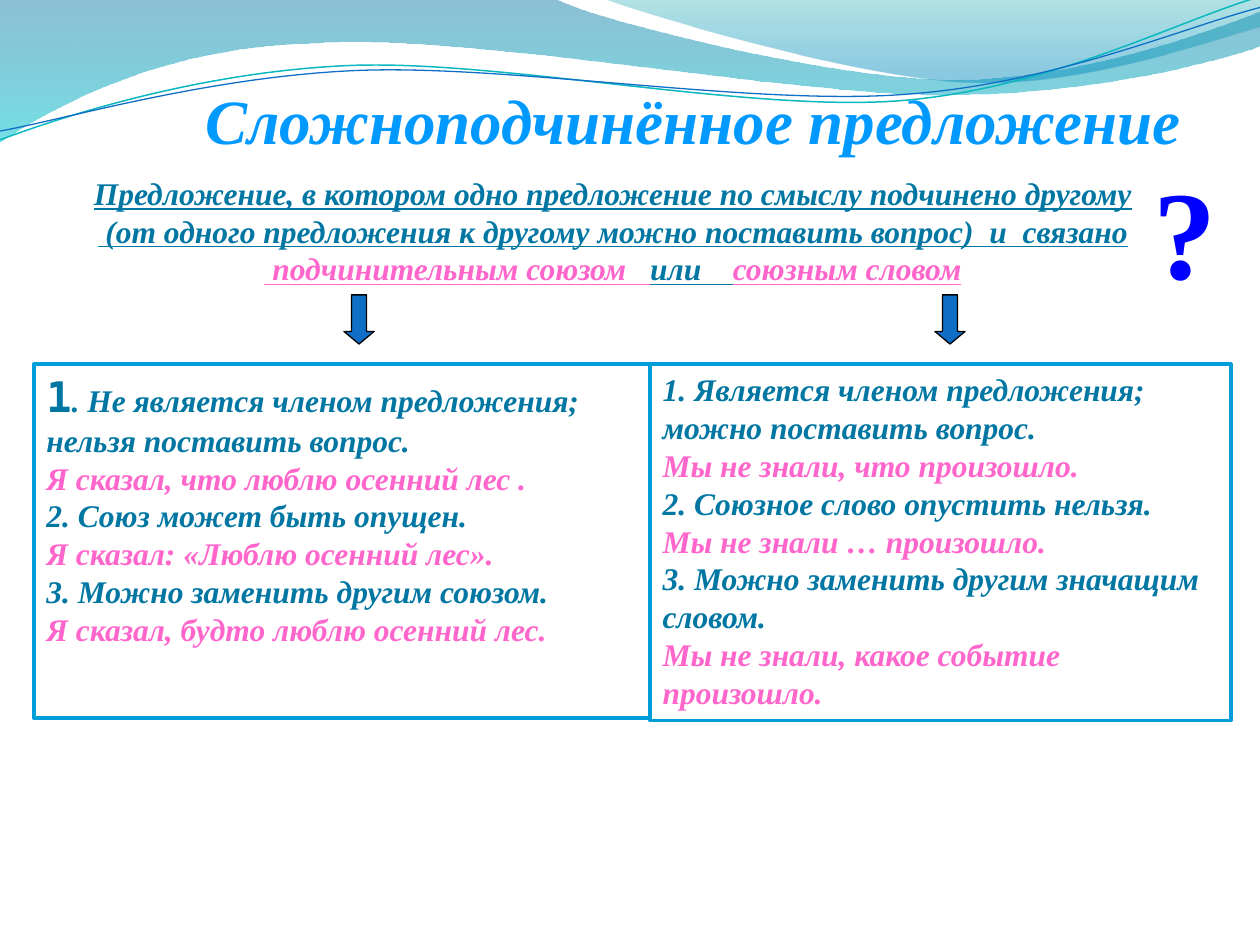
from math import cos, radians, sin
from typing import NamedTuple

from lxml import etree
from pptx import Presentation
from pptx.dml.color import RGBColor
from pptx.enum.shapes import MSO_SHAPE
from pptx.enum.text import MSO_ANCHOR, PP_ALIGN
from pptx.oxml.ns import qn
from pptx.util import Inches, Pt

RECT, DOWN_ARROW = MSO_SHAPE.RECTANGLE, MSO_SHAPE.DOWN_ARROW
LEFT, CENTER = PP_ALIGN.LEFT, PP_ALIGN.CENTER
TOP = MSO_ANCHOR.TOP

WHITE = RGBColor(0xFF, 0xFF, 0xFF)
BLACK = RGBColor(0x00, 0x00, 0x00)
SKY = RGBColor(0x00, 0x99, 0xFF)
TEAL = RGBColor(0x00, 0x76, 0xA3)
PINK = RGBColor(0xFF, 0x66, 0xCC)
BLUE = RGBColor(0x00, 0x00, 0xFF)
BORDER = RGBColor(0x00, 0x9D, 0xD9)
ACCENT = RGBColor(0x0F, 0x6F, 0xC6)
CYAN = RGBColor(0x0A, 0xB8, 0xBF)
DEEP = RGBColor(0x00, 0x74, 0xA1)
AQUA = RGBColor(0x00, 0xC6, 0xCF)
SEA = RGBColor(0x00, 0xA1, 0xA9)
AZURE = RGBColor(0x00, 0x8B, 0xBF)

SERIF = "Times New Roman"
MONO = "DejaVu Sans Mono"
TILT = 2.7


class Stop(NamedTuple):
    position: float
    color: RGBColor
    opacity: int


class Wave(NamedTuple):
    start: tuple
    segments: list
    stops: tuple


class Strand(NamedTuple):
    start: tuple
    segments: list
    center: tuple
    color: RGBColor
    width: float


class Panel(NamedTuple):
    box: tuple
    lines: list


class Span(NamedTuple):
    text: str
    color: RGBColor = TEAL
    size: float = 18
    font: str = SERIF
    italic: bool = True


WAVES = [
    Wave((0, 0), [
        (4.4, -0.01),
        (4.76, 0.17, 6.64, 0.63, 7.58, 0.63),
        (8.53, 0.63, 9.58, 0.26, 10, 0.09),
        (10.01, 0.36),
        (9.83, 0.44, 8.7, 0.76, 7.46, 0.75),
        (6.22, 0.75, 3.82, 0.28, 2.57, 0.34),
        (1.29, 0.36, 0.46, 0.83, -0.01, 1.13),
        (0, 0),
    ], (Stop(0, DEEP, 45), Stop(1, AQUA, 55))),
    Wave((4.79, -0.01), [
        (5.09, 0.11, 6.82, 0.62, 7.69, 0.65),
        (8.56, 0.69, 9.61, 0.32, 10, 0.21),
        (10, 0),
        (4.79, -0.01),
    ], (Stop(0, SEA, 30), Stop(0.8, AZURE, 45))),
]

STRANDS = [
    Strand((0, 1.11), [
        (0.48, 0.93, 1.58, 0.57, 2.77, 0.52),
        (3.95, 0.47, 5.93, 0.89, 7.13, 0.8),
        (8.33, 0.71, 9.38, 0.15, 9.98, -0.02),
    ], (4.99, 0.58), CYAN, 0.85),
    Strand((0, 1.04), [
        (0.47, 0.96, 1.64, 0.61, 2.83, 0.56),
        (4.03, 0.51, 5.97, 0.84, 7.17, 0.75),
        (8.36, 0.67, 9.41, 0.21, 10, 0.06),
    ], (5, 0.59), ACCENT, 0.75),
]

DEFINITION = [
    [Span("Предложение, в котором одно предложение по смыслу подчинено другому")],
    [Span(" (от одного предложения к другому можно поставить вопрос)  и  связано")],
    [Span(" подчинительным союзом   ", PINK), Span("или    "), Span("союзным словом", PINK)],
]

PANELS = [
    Panel((0.27, 2.89, 4.93, 2.81), [
        [Span("1", size=24, font=MONO, italic=False), Span(". Не является членом предложения;")],
        [Span("нельзя поставить вопрос.")],
        [Span("Я сказал, что люблю осенний лес .", PINK)],
        [Span("2. Союз может быть опущен.")],
        [Span("Я сказал: «Люблю осенний лес».", PINK)],
        [Span("3. Можно заменить другим союзом.")],
        [Span("Я сказал, будто люблю осенний лес.", PINK)],
    ]),
    Panel((5.16, 2.89, 4.61, 2.83), [
        [Span("1. Является членом предложения; можно поставить вопрос.")],
        [Span("Мы не знали, что произошло.", PINK)],
        [Span("2. Союзное слово опустить нельзя.")],
        [Span("Мы не знали … произошло.", PINK)],
        [Span("3. Можно заменить другим значащим словом.")],
        [Span("Мы не знали, какое событие произошло.", PINK)],
    ]),
]

ARROW_LEFTS = (2.73, 7.42)


def write_text(sp, lines: list, *, align=LEFT, underline: bool = False, wrap: bool = True) -> None:
    tf = sp.text_frame
    tf.word_wrap = wrap
    tf.vertical_anchor = TOP
    for i, spans in enumerate(lines):
        p = tf.paragraphs[0] if i == 0 else tf.add_paragraph()
        p.alignment = align
        for span in spans:
            r = p.add_run()
            r.text = span.text
            r.font.name, r.font.size = span.font, Pt(span.size)
            r.font.bold, r.font.italic, r.font.underline = True, span.italic, underline
            r.font.color.rgb = span.color


def add_text(s, box: tuple, lines: list, **text_format) -> None:
    write_text(s.shapes.add_textbox(*map(Inches, box)), lines, **text_format)


def add_box(s, kind, box: tuple, fill: RGBColor, line: RGBColor, width: float):
    sp = s.shapes.add_shape(kind, *map(Inches, box))
    sp.shadow.inherit = False
    sp.fill.solid()
    sp.fill.fore_color.rgb = fill
    sp.line.color.rgb = line
    sp.line.width = Pt(width)
    return sp


def add_outline(s, start: tuple, segments: list, close: bool):
    points = [(Inches(x), Inches(y)) for seg in segments for x, y in zip(seg[::2], seg[1::2])]
    builder = s.shapes.build_freeform(*map(Inches, start))
    builder.add_line_segments(points, close=close)
    sp = builder.convert_to_shape()
    sp.shadow.inherit = False
    steps = iter(list(sp._element.spPr.iter(qn("a:lnTo"))))
    for segment in segments:
        group = [next(steps) for _ in segment[::2]]
        if len(group) == 3:
            curve = etree.Element(qn("a:cubicBezTo"))
            group[0].addprevious(curve)
            for step in group:
                curve.append(step[0])
                step.getparent().remove(step)
    return sp


def add_wave(s, wave: Wave) -> None:
    sp = add_outline(s, wave.start, wave.segments, True)
    sp.line.fill.background()
    sp.fill.gradient()
    sp.fill.gradient_angle = 270
    for target, stop in zip(sp.fill.gradient_stops, wave.stops):
        target.position = stop.position
        target.color.rgb = stop.color
    for color, stop in zip(sp._element.spPr.iter(qn("a:srgbClr")), wave.stops):
        etree.SubElement(color, qn("a:alpha")).set("val", str(stop.opacity * 1000))


def level(points: tuple, center: tuple) -> tuple:
    (cx, cy), c, d = center, cos(radians(TILT)), sin(radians(TILT))
    pairs = zip(points[::2], points[1::2])
    return tuple(v for x, y in pairs for v in (
        cx + (x - cx) * c - (y - cy) * d, cy + (x - cx) * d + (y - cy) * c))


def add_strand(s, strand: Strand) -> None:
    segments = [level(segment, strand.center) for segment in strand.segments]
    sp = add_outline(s, level(strand.start, strand.center), segments, False)
    sp.rotation = 360 - TILT
    sp.fill.background()
    sp.line.color.rgb = strand.color
    sp.line.width = Pt(strand.width)


def main() -> None:
    prs = Presentation()
    prs.slide_width, prs.slide_height = Inches(10), Inches(7.5)
    s = prs.slides.add_slide(prs.slide_layouts[6])
    for wave in WAVES:
        add_wave(s, wave)
    for strand in STRANDS:
        add_strand(s, strand)
    add_text(s, (1.53, 0.6, 8.02, 1.31), [[Span("Сложноподчинённое предложение", SKY, 36)]], wrap=False)
    add_text(s, (0.51, 1.33, 8.71, 1.01), DEFINITION, align=CENTER, underline=True)
    for panel in PANELS:
        write_text(add_box(s, RECT, panel.box, WHITE, BORDER, 2), panel.lines)
    add_text(s, (9.06, 1.17, 0.71, 1.31), [[Span("?", BLUE, 72, italic=False)]], wrap=False)
    for left in ARROW_LEFTS:
        arrow = add_box(s, DOWN_ARROW, (left, 2.34, 0.24, 0.39), ACCENT, BLACK, 0.75)
        arrow.adjustments[1] = 0.415
    prs.save("out.pptx")


if __name__ == "__main__":
    main()
